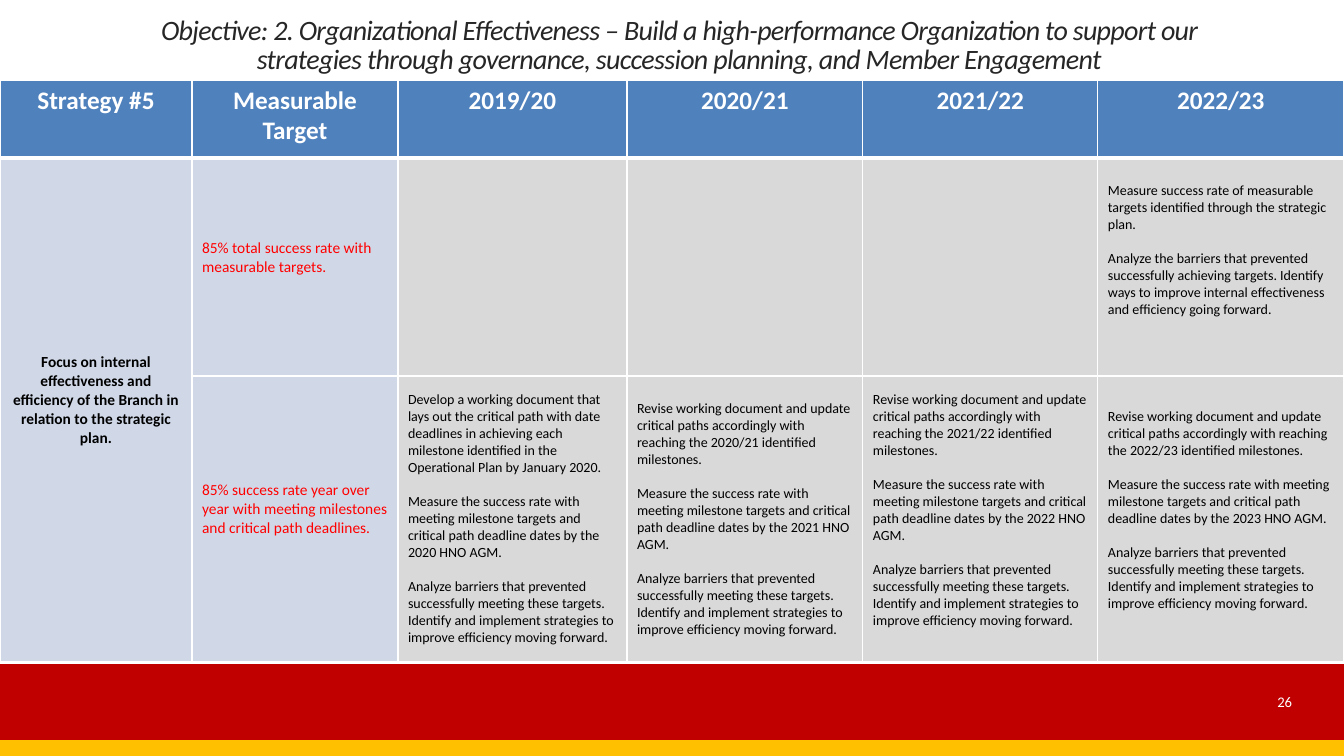
from lxml import etree
from pptx import Presentation
from pptx import util as u
from pptx.dml.color import RGBColor
from pptx.enum import shapes, text
from pptx.oxml import ns

WHITE = RGBColor(0xFF, 0xFF, 0xFF)
BLACK = RGBColor(0x00, 0x00, 0x00)
CHARCOAL = RGBColor(0x26, 0x26, 0x26)
TARGET_RED = RGBColor(0xFF, 0x00, 0x00)
BAND_RED = RGBColor(0xC0, 0x00, 0x00)
BAND_GOLD = RGBColor(0xFF, 0xC0, 0x00)
HEADER_BLUE = RGBColor(0x4F, 0x81, 0xBD)
PALE_BLUE = RGBColor(0xD0, 0xD8, 0xE8)
LIGHT_GREY = RGBColor(0xD9, 0xD9, 0xD9)

WIDTH, HEIGHT = 1344, 756
EMU_PER_PX = 12192000 / WIDTH
LEFT, CENTER, RIGHT = text.PP_ALIGN.LEFT, text.PP_ALIGN.CENTER, text.PP_ALIGN.RIGHT
TOP, MIDDLE, BOTTOM = text.MSO_ANCHOR.TOP, text.MSO_ANCHOR.MIDDLE, text.MSO_ANCHOR.BOTTOM

TITLE = ("Objective: 2. Organizational Effectiveness – Build a high-performance Organization "
         "to support our strategies through governance, succession planning, and Member Engagement")
HEADERS = ["Strategy #5", "Measurable Target", "2019/20", "2020/21", "2021/22", "2022/23"]
COLUMN_WIDTHS = [192, 206, 229, 236, 235, 246]
ROW_HEIGHTS = [78, 218, 286]
STRATEGY = ("Focus on internal effectiveness and efficiency of the Branch "
            "in relation to the strategic plan.")
TARGETS = ["85% total success rate with measurable targets.",
           "85% success rate year over year with meeting milestones and critical path deadlines."]
FINAL_REVIEW = [
    "Measure success rate of measurable targets identified through the strategic plan.",
    "Analyze the barriers that prevented successfully achieving targets. Identify ways to "
    "improve internal effectiveness and efficiency going forward.",
]
FIRST_STEP = ("Develop a working document that lays out the critical path with date deadlines in "
              "achieving each milestone identified in the Operational Plan by January 2020.")


def yearly_plan(season, year):
    first = FIRST_STEP if year == 2020 else (
        "Revise working document and update critical paths accordingly with reaching "
        f"the {season} identified milestones.")
    return [
        first,
        "Measure the success rate with meeting milestone targets and critical path deadline "
        f"dates by the {year} HNO AGM.",
        "Analyze barriers that prevented successfully meeting these targets. Identify and "
        "implement strategies to improve efficiency moving forward.",
    ]


def px(length):
    return u.Emu(round(length * EMU_PER_PX))


class SlideBuilder:
    font_name = "Calibri"

    def __init__(self, presentation):
        self.slide = presentation.slides.add_slide(presentation.slide_layouts[5])

    def set_text(self, frame, paragraphs, size, color, align=LEFT, bold=False, italic=False, gap=0):
        frame.text = "\n".join(paragraphs)
        for index, paragraph in enumerate(frame.paragraphs):
            paragraph.alignment = align
            if index:
                paragraph.space_before = u.Pt(gap)
            for run in paragraph.runs:
                font = run.font
                font.name, font.size = self.font_name, u.Pt(size)
                font.bold, font.italic = bold, italic
                font.color.rgb = color

    def place(self, shape, left, top, width, height):
        shape.left, shape.top, shape.width, shape.height = map(px, (left, top, width, height))

    def title(self, words, *box):
        shape = self.slide.shapes.title
        self.place(shape, *box)
        frame = shape.text_frame
        self.set_text(frame, [words], 20, CHARCOAL, CENTER, italic=True)
        frame.word_wrap = True
        frame.auto_size = text.MSO_AUTO_SIZE.NONE
        frame.vertical_anchor = BOTTOM
        paragraph = frame.paragraphs[0]
        paragraph.line_spacing = 0.85
        paragraph.runs[0]._r.get_or_add_rPr().set("spc", "-50")

    def band(self, color, *box):
        shape = self.slide.shapes.add_shape(shapes.MSO_SHAPE.RECTANGLE, *map(px, box))
        shape.shadow.inherit = False
        shape.fill.solid()
        shape.fill.fore_color.rgb = color
        shape.line.fill.background()

    def page_number(self, number, *box):
        frame = self.slide.shapes.add_textbox(*map(px, box)).text_frame
        frame.word_wrap = True
        frame.vertical_anchor = MIDDLE
        self.set_text(frame, [number], 10.5, WHITE, RIGHT)

    def table(self, left, top, widths, heights):
        table = self.slide.shapes.add_table(
            len(heights), len(widths), px(left), px(top),
            px(sum(widths)), px(sum(heights))).table
        table.horz_banding = False
        for column, width in zip(table.columns, widths):
            column.width = px(width)
        for row, height in zip(table.rows, heights):
            row.height = px(height)
        for row_index in range(len(heights)):
            for column_index in range(len(widths)):
                cell = table.cell(row_index, column_index)
                self.borders(cell, top=3 if row_index == 1 else 1,
                             bottom=3 if row_index == 0 else 1)
                cell.fill.solid()
                cell.fill.fore_color.rgb = (HEADER_BLUE if row_index == 0 else
                                            PALE_BLUE if column_index < 2 else LIGHT_GREY)
        return table

    def borders(self, cell, top, bottom):
        properties = cell._tc.get_or_add_tcPr()
        for tag, points in (("a:lnL", 1), ("a:lnR", 1), ("a:lnT", top), ("a:lnB", bottom)):
            line = etree.SubElement(properties, ns.qn(tag), w=str(u.Pt(points)))
            fill = etree.SubElement(line, ns.qn("a:solidFill"))
            etree.SubElement(fill, ns.qn("a:srgbClr"), val=str(WHITE))

    def cell(self, cell, paragraphs, size, color, align=LEFT, bold=False, anchor=MIDDLE, lift=0):
        """Fill a cell; lift is extra bottom margin in px."""
        cell.vertical_anchor = anchor
        cell.margin_bottom = px(5 + lift)
        self.set_text(cell.text_frame, paragraphs, size, color, align, bold, gap=12.2)


def main():
    presentation = Presentation()
    presentation.slide_width, presentation.slide_height = px(WIDTH), px(HEIGHT)
    builder = SlideBuilder(presentation)

    builder.band(BAND_RED, 0, 664, WIDTH, 76)
    builder.band(BAND_GOLD, 0, 740, WIDTH, 16)
    builder.page_number("26", 1157, 682, 145, 40)
    builder.title(TITLE, 114, 20, 1130, 60)

    table = builder.table(0, 80, COLUMN_WIDTHS, ROW_HEIGHTS)
    for column, header in enumerate(HEADERS):
        builder.cell(table.cell(0, column), [header], 18, WHITE, CENTER, bold=True, anchor=TOP)
    table.cell(1, 0).merge(table.cell(2, 0))
    builder.cell(table.cell(1, 0), [STRATEGY], 11, BLACK, CENTER, bold=True, lift=19)
    for row, target in enumerate(TARGETS, start=1):
        builder.cell(table.cell(row, 1), [target], 11, TARGET_RED, lift=19)
    builder.cell(table.cell(1, 5), FINAL_REVIEW, 10, BLACK, lift=34)
    for column, lift in enumerate([0, 0, 17, 17], start=2):
        plan = yearly_plan(HEADERS[column], 2018 + column)
        builder.cell(table.cell(2, column), plan, 10, BLACK, lift=lift)

    presentation.save("out.pptx")


if __name__ == "__main__":
    main()
